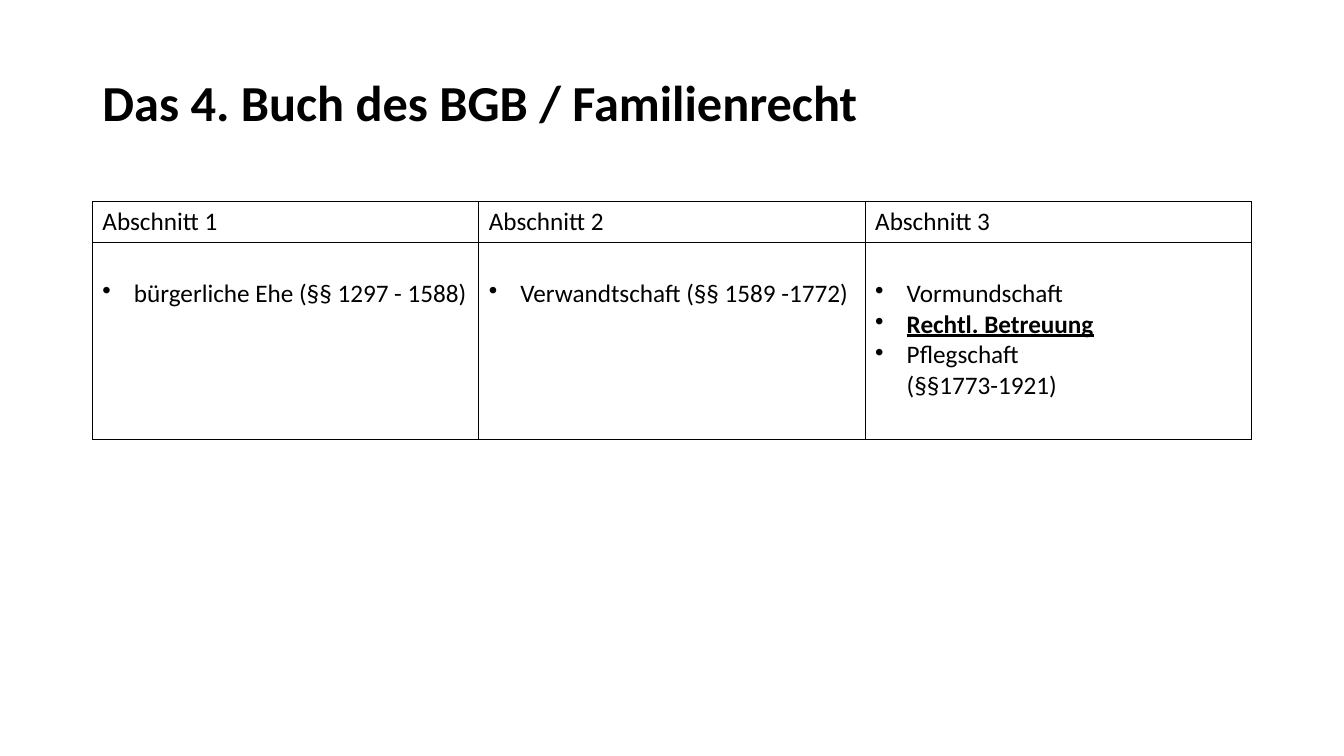
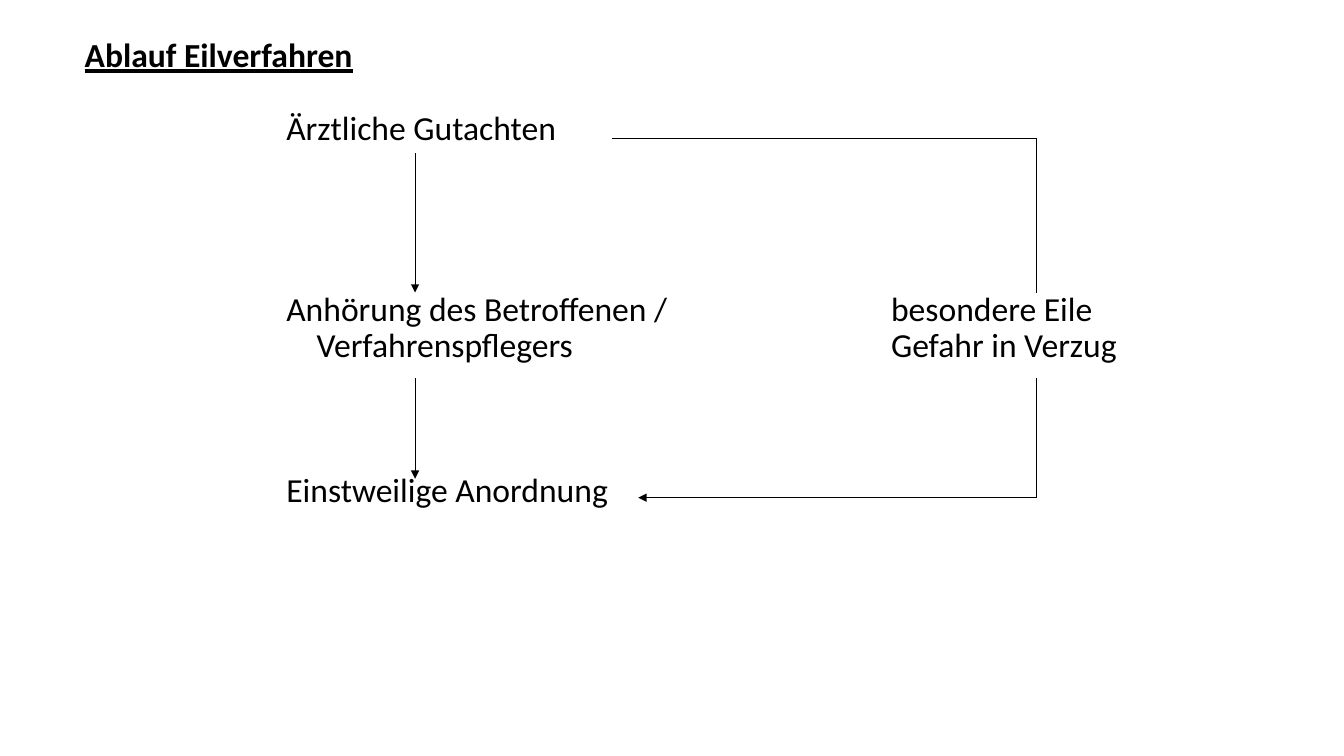
from dataclasses import dataclass

from lxml.etree import SubElement
from pptx import Presentation
from pptx.dml.color import RGBColor as RGB
from pptx.enum.shapes import MSO_CONNECTOR as CONN
from pptx.enum.text import MSO_ANCHOR as ANCHOR, MSO_AUTO_SIZE as AUTO, PP_ALIGN as ALIGN
from pptx.oxml.ns import qn
from pptx.util import Pt


@dataclass(frozen=True)
class Theme:
    ink: RGB = RGB(0, 0, 0)
    paper: RGB = RGB(255, 255, 255)
    font: str = "Calibri"
    title: int = 36
    flow: int = 24
    table: int = 18
    spacing: float = 0.9
    border: float = 1
    line: float = 0.5


T = Theme()


def style(p, size, bold=False, underline=False, spacing=None):
    f = p.font
    f.name, f.size, f.bold, f.underline = T.font, Pt(size), bold, underline
    f.color.rgb = T.ink
    p.alignment = ALIGN.LEFT
    p.line_spacing = spacing


def place(sp, left, top, width, height, inset=None):
    sp.left, sp.top, sp.width, sp.height = Pt(left), Pt(top), Pt(width), Pt(height)
    tf = sp.text_frame
    tf.word_wrap = True
    tf.auto_size = AUTO.NONE
    tf.vertical_anchor = ANCHOR.MIDDLE if inset is None else ANCHOR.TOP
    if inset is not None:
        tf.margin_left = tf.margin_right = tf.margin_top = tf.margin_bottom = Pt(inset)
    return tf


prs = Presentation()
prs.slide_width, prs.slide_height = Pt(960), Pt(540)
title_only = prs.slide_layouts[5]

# Slide 1: title
s = prs.slides.add_slide(title_only)
tf = place(s.shapes.title, 66, 47.5, 828, 55)
tf.text = "Das 4. Buch des BGB / Familienrecht"
style(tf.paragraphs[0], T.title, bold=True, spacing=T.spacing)

# Slide 1: sections of the book
sections = [
    ("Abschnitt 1", ["bürgerliche Ehe (§§ 1297 - 1588)"]),
    ("Abschnitt 2", ["Verwandtschaft (§§ 1589 -1772)"]),
    ("Abschnitt 3", ["Vormundschaft", "Rechtl. Betreuung", "Pflegschaft\n(§§1773-1921)"]),
]
emphasis = "Rechtl. Betreuung"
heights = (29, 141)
hanging = Pt(22.5)

table = s.shapes.add_table(2, len(sections), Pt(66), Pt(144), Pt(828), Pt(sum(heights))).table
table.first_row = table.horz_banding = False
for row, height in zip(table.rows, heights):
    row.height = Pt(height)

for col, (heading, items) in enumerate(sections):
    for row, lines in enumerate(([heading], items)):
        cell = table.cell(row, col)
        tf = cell.text_frame
        for i, line in enumerate(lines):
            p = tf.paragraphs[0] if i == 0 else tf.add_paragraph()
            p.text = line
            style(p, T.table, bold=line == emphasis, underline=line == emphasis)
            if row == 1:
                pPr = p._p.get_or_add_pPr()
                pPr.set("marL", str(hanging))
                pPr.set("indent", str(-hanging))
                bullet = pPr.makeelement(qn("a:buChar"), {"char": "•"})
                pPr.find(qn("a:defRPr")).addprevious(bullet)
        if row == 1:
            cell.margin_top = Pt(25.6)

        # Cell borders come before the fill
        tcPr = cell._tc.get_or_add_tcPr()
        for side in ("lnL", "lnR", "lnT", "lnB"):
            ln = SubElement(tcPr, qn(f"a:{side}"), w=str(Pt(T.border)))
            SubElement(SubElement(ln, qn("a:solidFill")), qn("a:srgbClr"), val=str(T.ink))
        cell.fill.solid()
        cell.fill.fore_color.rgb = T.paper

# Slide 2: title
s = prs.slides.add_slide(title_only)
tf = place(s.shapes.title, 60.5, 27.5, 814, 30, inset=0)
tf.text = "Ablauf Eilverfahren"
style(tf.paragraphs[0], T.flow, bold=True, underline=True, spacing=T.spacing)

# Slide 2: steps as (column, row, lines, indent of the later lines)
columns = (204.5, 636.5)
first_top, row_step = 79.5, 129.3
steps = [
    (0, 0, ["Ärztliche Gutachten"], 0),
    (0, 1, ["Anhörung des Betroffenen /", "Verfahrenspflegers"], 21.7),
    (1, 1, ["besondere Eile", "Gefahr in Verzug"], 0),
    (0, 2, ["Einstweilige Anordnung"], 0),
]
for col, row, lines, indent in steps:
    sp = s.shapes.add_textbox(0, 0, 0, 0)
    tf = place(sp, columns[col], first_top + row * row_step, 300, 28 * len(lines), inset=0)
    for i, line in enumerate(lines):
        p = tf.paragraphs[0] if i == 0 else tf.add_paragraph()
        p.text = line
        style(p, T.flow, spacing=T.spacing)
        if i and indent:
            p._p.get_or_add_pPr().set("marL", str(Pt(indent)))

# Slide 2: main path, then the urgent path on the right
main_x, urgent_x = 296.5, 740.5
top_y, end_y = 98.5, 355.5
links = [
    (main_x, 109.5, main_x, 209, True),
    (main_x, 270, main_x, 342, True),
    (437, top_y, urgent_x, top_y, False),
    (urgent_x, top_y, urgent_x, 209, False),
    (urgent_x, 270, urgent_x, end_y, False),
    (urgent_x, end_y, 456, end_y, True),
]
for *ends, arrow in links:
    link = s.shapes.add_connector(CONN.STRAIGHT, *(Pt(v) for v in ends))
    link.line.color.rgb = T.ink
    link.line.width = Pt(T.line)
    if arrow:
        SubElement(link.line._get_or_add_ln(), qn("a:tailEnd"), type="triangle")
    SubElement(link._element.spPr, qn("a:effectLst"))

prs.save("out.pptx")
